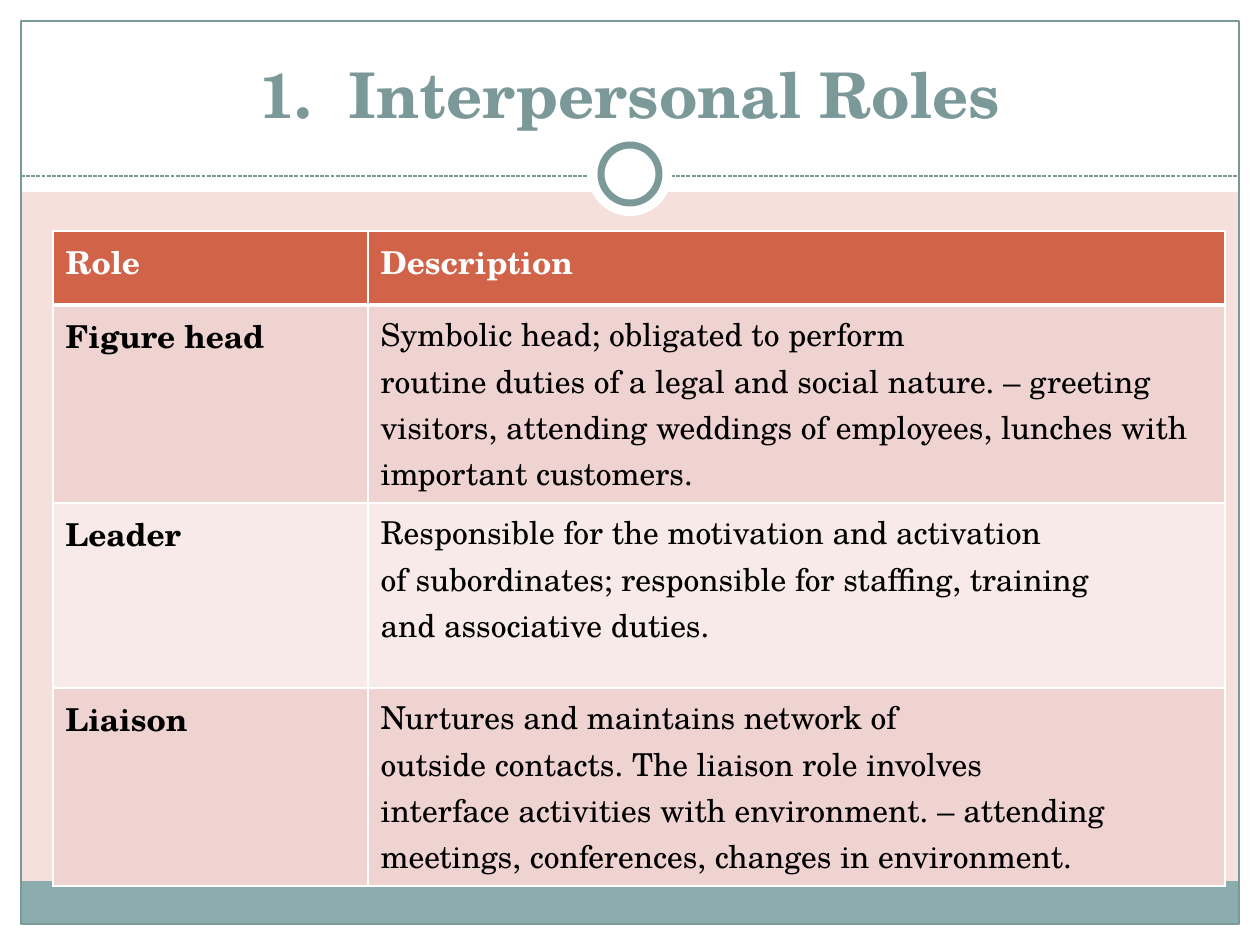
from lxml import etree
from pptx import Presentation
from pptx.dml.color import RGBColor
from pptx.enum.dml import MSO_LINE
from pptx.enum.shapes import MSO_CONNECTOR, MSO_SHAPE
from pptx.enum.text import MSO_ANCHOR, PP_ALIGN
from pptx.oxml.ns import qn
from pptx.util import Pt

RECTANGLE, OVAL = MSO_SHAPE.RECTANGLE, MSO_SHAPE.OVAL
STRAIGHT = MSO_CONNECTOR.STRAIGHT
DASH = MSO_LINE.SQUARE_DOT
CENTER, BOTTOM = PP_ALIGN.CENTER, MSO_ANCHOR.BOTTOM

EMU_PER_PX = 914400 / 126
WIDTH, HEIGHT = 1260, 945
FONT = "TeX Gyre Schola"
WHITE, BLACK, TEAL, BAND = "FFFFFF", "000000", "7C999A", "8CADAE"
BACKGROUND, HEADER, ROW_DARK, ROW_LIGHT = "F6E0DB", "D16349", "EED3D0", "F7EAE9"

ROLES = [
    ("Figure head", [
        "Symbolic head; obligated to perform",
        "routine duties of a legal and social nature. – greeting visitors, "
        "attending weddings of employees, lunches with important customers."]),
    ("Leader", [
        "Responsible for the motivation and activation",
        "of subordinates; responsible for staffing, training",
        "and associative duties."]),
    ("Liaison", [
        "Nurtures and maintains network of",
        "outside contacts. The liaison role involves",
        "interface activities with environment. – attending meetings, "
        "conferences, changes in environment."]),
]


def px(value):
    return round(value * EMU_PER_PX)


def color(value):
    return RGBColor.from_string(value)


def add_run(paragraph, text, size, text_color, bold):
    run = paragraph.add_run()
    run.text = text
    run.font.name = FONT
    run.font.size = Pt(size)
    run.font.bold = bold
    run.font.color.rgb = color(text_color)


def add_shape(slide, kind, box, fill=None, line=None, line_width=0.75):
    shape = slide.shapes.add_shape(kind, *map(px, box))
    shape.shadow.inherit = False
    if fill:
        shape.fill.solid()
        shape.fill.fore_color.rgb = color(fill)
    else:
        shape.fill.background()
    if line:
        shape.line.color.rgb = color(line)
        shape.line.width = Pt(line_width)
    else:
        shape.line.fill.background()


def add_frame(slide, box):
    left, top, width, height = box
    margin, header_height, band_height = 21, 192, 43
    inner_width, inner_height = width - 2 * margin, height - 2 * margin
    right, bottom = left + width - margin, top + height - margin

    # White page edges
    for edge in ((left, bottom, width, margin),
                 (left, top, width, header_height),
                 (left, top, margin, height),
                 (right, top, margin, height)):
        add_shape(slide, RECTANGLE, edge, WHITE)

    # Footer band and outline
    add_shape(slide, RECTANGLE,
              (left + margin, bottom - band_height, inner_width, band_height), BAND)
    add_shape(slide, RECTANGLE,
              (left + margin, top + margin, inner_width, inner_height), line=TEAL)

    # Dashed divider
    divider_y = top + 176
    divider = slide.shapes.add_connector(
        STRAIGHT, px(left + margin), px(divider_y), px(right), px(divider_y))
    divider.line.color.rgb = color(TEAL)
    divider.line.width = Pt(0.75)
    divider.line.dash_style = DASH
    etree.SubElement(divider.element.spPr, qn("a:effectLst"))

    # Ring over the divider
    center_x, center_y = left + width // 2, top + 174
    for radius, line in ((42, None), (29, TEAL)):
        add_shape(slide, OVAL,
                  (center_x - radius, center_y - radius, 2 * radius, 2 * radius),
                  WHITE, line, 4)


def add_title(slide, box):
    title = slide.shapes.title
    title.left, title.top, title.width, title.height = map(px, box)
    # Bring the title in front of the white header
    title.element.getparent().append(title.element)
    frame = title.text_frame
    frame.word_wrap = True
    frame.vertical_anchor = BOTTOM
    paragraph = frame.paragraphs[0]
    paragraph.alignment = CENTER
    add_run(paragraph, "1.  Interpersonal Roles", 36, TEAL, True)


def set_borders(cell, bottom_width):
    properties = cell._tc.get_or_add_tcPr()
    widths = {"a:lnL": 1, "a:lnR": 1, "a:lnT": 1, "a:lnB": bottom_width}
    for position, (tag, width) in enumerate(widths.items()):
        line = etree.Element(qn(tag), w=str(Pt(width)))
        fill = etree.SubElement(line, qn("a:solidFill"))
        etree.SubElement(fill, qn("a:srgbClr"), val=WHITE)
        properties.insert(position, line)


def fill_cell(cell, lines, fill, text_color, bold, bottom_width):
    cell.fill.solid()
    cell.fill.fore_color.rgb = color(fill)
    set_borders(cell, bottom_width)
    frame = cell.text_frame
    for index, text in enumerate(lines):
        paragraph = frame.add_paragraph() if index else frame.paragraphs[0]
        add_run(paragraph, text, 18, text_color, bold)


def add_roles_table(slide, box):
    column_widths, row_heights = (315, 857), (74, 198, 185, 198)
    rows = [("Role", ["Description"])] + ROLES
    table = slide.shapes.add_table(
        len(rows), len(column_widths), *map(px, box)).table
    for column, width in zip(table.columns, column_widths):
        column.width = px(width)
    for index, (role, description) in enumerate(rows):
        table.rows[index].height = px(row_heights[index])
        is_header = index == 0
        fill = HEADER if is_header else (ROW_DARK if index % 2 else ROW_LIGHT)
        text_color = WHITE if is_header else BLACK
        bottom_width = 3 if is_header else 1
        fill_cell(table.cell(index, 0), [role], fill, text_color, True, bottom_width)
        fill_cell(table.cell(index, 1), description, fill, text_color,
                  is_header, bottom_width)


def main():
    presentation = Presentation()
    presentation.slide_width, presentation.slide_height = px(WIDTH), px(HEIGHT)
    slide = presentation.slides.add_slide(presentation.slide_layouts[5])
    slide.background.fill.solid()
    slide.background.fill.fore_color.rgb = color(BACKGROUND)
    add_frame(slide, (0, 0, WIDTH, HEIGHT))
    add_title(slide, (42, 32, 1176, 105))
    add_roles_table(slide, (53, 231, 1172, 655))
    presentation.save("out.pptx")


if __name__ == "__main__":
    main()
